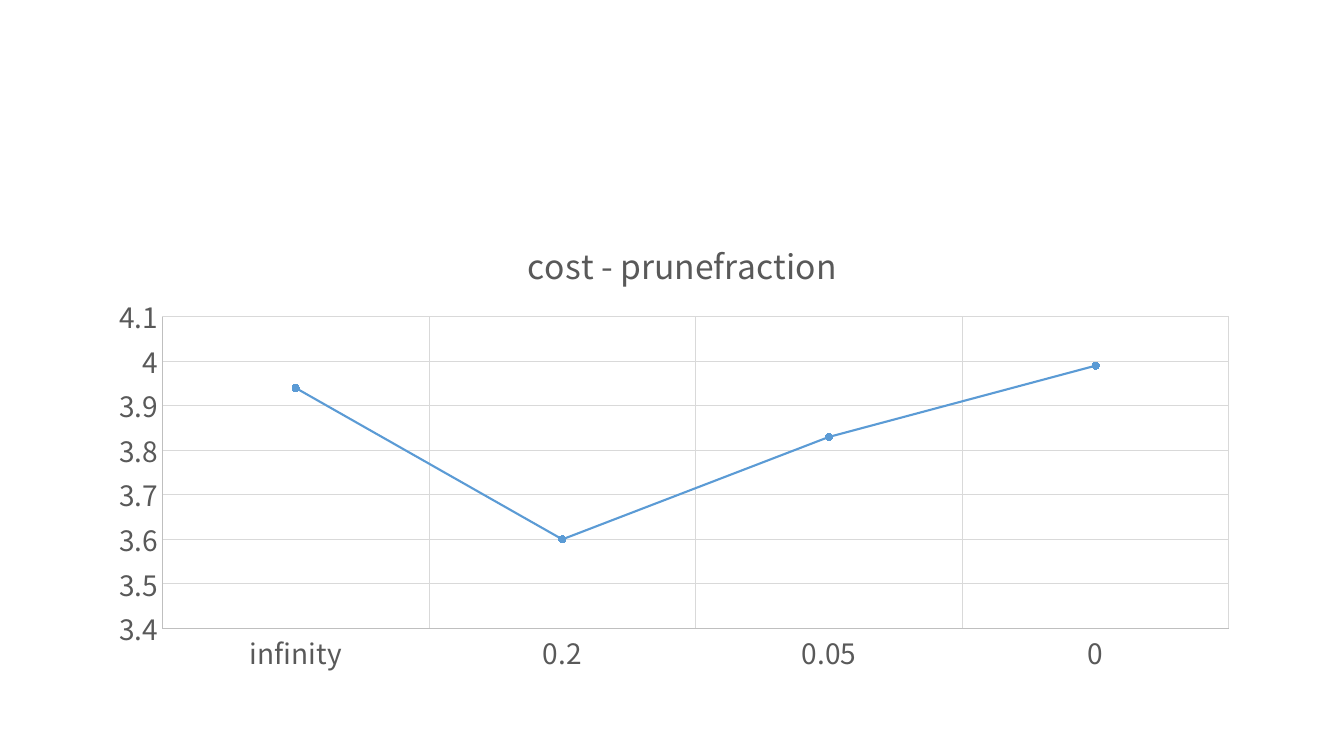
from lxml import etree
from pptx import Presentation
from pptx.chart.data import CategoryChartData
from pptx.dml.color import RGBColor
from pptx.enum.chart import XL_CHART_TYPE, XL_MARKER_STYLE, XL_TICK_MARK
from pptx.oxml.ns import qn
from pptx.util import Inches, Pt

LINE_CHART = XL_CHART_TYPE.LINE_MARKERS_STACKED
CIRCLE = XL_MARKER_STYLE.CIRCLE
NO_TICK = XL_TICK_MARK.NONE
FONT = "Noto Sans CJK SC"
BLUE, GREY, AXIS_GREY, GRID_GREY = "5B9BD5", "595959", "BFBFBF", "D9D9D9"
COSTS = {"infinity": 3.94, "0.2": 3.6, "0.05": 3.83, "0": 3.99}


def rgb(value):
    """Turn a hex string into a colour."""
    return RGBColor.from_string(value)


def style_font(font, size=20, color=GREY, bold=False):
    """Give a font its face, size, colour and weight."""
    font.name, font.size, font.bold = FONT, Pt(size), bold
    font.color.rgb = rgb(color)


def write_text(frame, text, **style):
    """Write one formatted run into a text frame."""
    run = frame.paragraphs[0].add_run()
    run.text = text
    style_font(run.font, **style)


def style_line(line, color, width=0.75):
    """Give a line its colour and width in points."""
    line.color.rgb = rgb(color)
    line.width = Pt(width)


def style_axis(axis):
    """Format the labels, line and gridlines of an axis."""
    axis.major_tick_mark = axis.minor_tick_mark = NO_TICK
    style_font(axis.tick_labels.font)
    style_line(axis.format.line, AXIS_GREY)
    axis.has_major_gridlines = True
    style_line(axis.major_gridlines.format.line, GRID_GREY)


def place_part(part, **fractions):
    """Place a chart part by fractions of the chart area."""
    layout = part.find(qn("c:layout"))
    if layout is None:
        layout = etree.Element(qn("c:layout"))
        text = part.find(qn("c:tx"))
        part.insert(0 if text is None else part.index(text) + 1, layout)
    manual = etree.SubElement(layout, qn("c:manualLayout"))
    settings = {"xMode": "edge", "yMode": "edge", **fractions}
    if "w" in fractions:
        settings = {"layoutTarget": "inner", **settings}
    for key, value in settings.items():
        etree.SubElement(manual, qn(f"c:{key}")).set("val", str(value))


def add_cost_chart(slide, left, top, width, height):
    """Draw cost against prune fraction in the given box."""
    data = CategoryChartData(number_format="General")
    data.categories = COSTS.keys()
    data.add_series("Series 1", COSTS.values())
    chart = slide.shapes.add_chart(
        LINE_CHART, Inches(left), Inches(top), Inches(width), Inches(height), data
    ).chart
    style_font(chart.font, color="000000")
    chart.has_legend = False
    chart.has_title = True
    write_text(chart.chart_title.text_frame, "cost - prunefraction", size=24)
    chart.chart_title.include_in_layout = False
    place_part(chart.chart_title._element, x=0.37, y=0.06)
    place_part(chart.plots[0]._element.getparent(), x=0.06, y=0.24, w=0.92, h=0.65)

    for axis in (chart.category_axis, chart.value_axis):
        style_axis(axis)
    chart.value_axis.minimum_scale = 3.4
    chart.value_axis.maximum_scale = 4.1
    chart.value_axis.major_unit = 0.1

    plot = chart.plots[0]
    plot.vary_by_categories = False
    cost = plot.series[0]
    cost.smooth = False
    style_line(cost.format.line, BLUE, 1.5)
    cost.marker.style, cost.marker.size = CIRCLE, 5
    cost.marker.format.fill.solid()
    cost.marker.format.fill.fore_color.rgb = rgb(BLUE)
    style_line(cost.marker.format.line, BLUE)


def main():
    """Build the slide and save it."""
    deck = Presentation()
    deck.slide_width, deck.slide_height = Inches(13.33), Inches(7.5)
    slide = deck.slides.add_slide(deck.slide_layouts[6])
    add_cost_chart(slide, 0.92, 2, 11.5, 4.76)
    deck.save("out.pptx")


if __name__ == "__main__":
    main()
